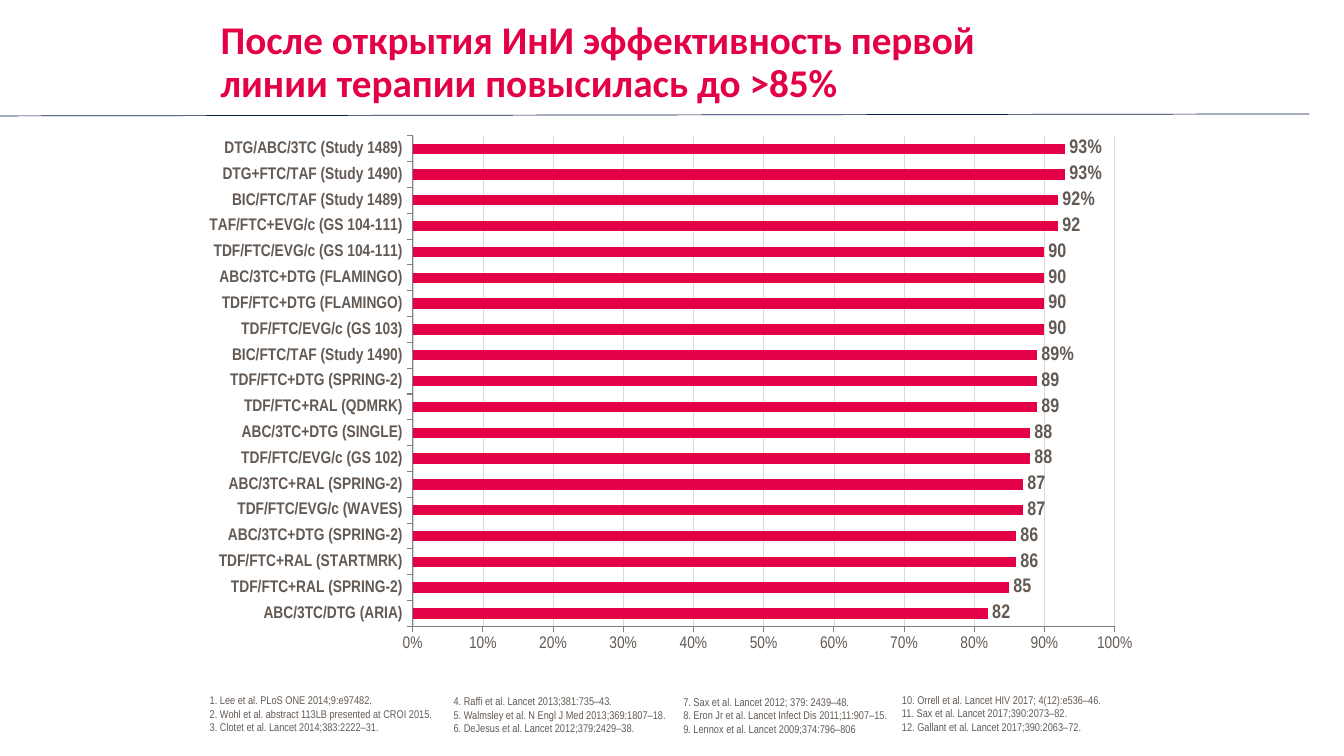
from lxml import etree
from pptx import Presentation
from pptx.chart.data import CategoryChartData
from pptx.dml.color import RGBColor
from pptx.enum.chart import XL_CHART_TYPE, XL_LABEL_POSITION, XL_TICK_MARK
from pptx.enum.shapes import MSO_CONNECTOR
from pptx.enum.text import MSO_ANCHOR
from pptx.oxml import parse_xml
from pptx.oxml.ns import nsdecls, qn
from pptx.util import Pt

BAR_CLUSTERED = XL_CHART_TYPE.BAR_CLUSTERED
OUTSIDE_END = XL_LABEL_POSITION.OUTSIDE_END
TICK_OUTSIDE, TICK_NONE = XL_TICK_MARK.OUTSIDE, XL_TICK_MARK.NONE
STRAIGHT = MSO_CONNECTOR.STRAIGHT
TOP, MIDDLE = MSO_ANCHOR.TOP, MSO_ANCHOR.MIDDLE

RED, BAR_RED, BROWN = "E30046", "E40046", "635A54"
NAVY, AXIS_GREY, GRID_GREY = "071D49", "808080", "D9D9D9"
NARROW = "Arial Narrow"

TITLE = "После открытия ИнИ эффективность первой\nлинии терапии повысилась до >85%"

# Regimen, efficacy in percent, whether its label carries a percent sign
STUDIES = [
    ("ABC/3TC/DTG (ARIA)", 82, False),
    ("TDF/FTC+RAL (SPRING-2)", 85, False),
    ("TDF/FTC+RAL (STARTMRK)", 86, False),
    ("ABC/3TC+DTG (SPRING-2)", 86, False),
    ("TDF/FTC/EVG/c (WAVES)", 87, False),
    ("ABC/3TC+RAL (SPRING-2)", 87, False),
    ("TDF/FTC/EVG/c (GS 102)", 88, False),
    ("ABC/3TC+DTG (SINGLE)", 88, False),
    ("TDF/FTC+RAL (QDMRK)", 89, False),
    ("TDF/FTC+DTG (SPRING-2)", 89, False),
    ("BIC/FTC/TAF (Study 1490)", 89, True),
    ("TDF/FTC/EVG/c (GS 103)", 90, False),
    ("TDF/FTC+DTG (FLAMINGO)", 90, False),
    ("ABC/3TC+DTG (FLAMINGO)", 90, False),
    ("TDF/FTC/EVG/c (GS 104-111)", 90, False),
    ("TAF/FTC+EVG/c (GS 104-111)", 92, False),
    ("BIC/FTC/TAF (Study 1489)", 92, True),
    ("DTG+FTC/TAF (Study 1490)", 93, True),
    ("DTG/ABC/3TC (Study 1489)", 93, True),
]

# Box, insets (left, top, right, bottom), anchor, lines
TOP_INSETS, SIDE_INSETS = (0, 5.8, 0, 0), (7.2, 3.6, 7.2, 3.6)
REFERENCES = [
    ((149.8, 489.6, 200.9, 28.8), TOP_INSETS, TOP, [
        "1. Lee et al. PLoS ONE 2014;9:e97482.",
        "2. Wohl et al. abstract 113LB presented at CROI 2015.",
        "3. Clotet et al. Lancet 2014;383:2222–31."]),
    ((324, 490.3, 173.5, 41.8), TOP_INSETS, TOP, [
        "4. Raffi et al. Lancet 2013;381:735–43.",
        "5. Walmsley et al. N Engl J Med 2013;369:1807–18.",
        "6. DeJesus et al. Lancet 2012;379:2429–38."]),
    ((481, 489.6, 192.2, 42.5), SIDE_INSETS, MIDDLE, [
        "7. Sax et al. Lancet 2012; 379: 2439–48.",
        "8. Eron Jr et al. Lancet Infect Dis 2011;11:907–15.",
        "9. Lennox et al. Lancet 2009;374:796–806"]),
    ((637.2, 493.2, 164.9, 32.4), SIDE_INSETS, MIDDLE, [
        "10. Orrell et al. Lancet HIV 2017; 4(12):e536–46.",
        "11. Sax et al. Lancet 2017;390:2073–82.",
        "12. Gallant et al. Lancet 2017;390:2063–72."]),
]


def color(hex_string):
    return RGBColor.from_string(hex_string)


def format_font(font, size, hex_color=BROWN, name=NARROW, bold=False):
    font.size, font.name, font.bold = Pt(size), name, bold
    font.color.rgb = color(hex_color)


def format_line(line, hex_color, width):
    line.color.rgb = color(hex_color)
    line.width = Pt(width)


def add_text(slide, box, paragraphs, insets=SIDE_INSETS, anchor=TOP, spacing=None, **font):
    """Place a wrapped text box with one format for all its paragraphs."""
    frame = slide.shapes.add_textbox(*map(Pt, box)).text_frame
    frame.word_wrap = True
    frame.vertical_anchor = anchor
    frame.margin_left, frame.margin_top, frame.margin_right, frame.margin_bottom = map(Pt, insets)
    for index, text in enumerate(paragraphs):
        paragraph = frame.add_paragraph() if index else frame.paragraphs[0]
        paragraph.text = text
        paragraph.line_spacing = spacing
        for run in paragraph.runs:
            format_font(run.font, **font)


def add_header(slide, box):
    """Title over a thin, slightly rising rule that starts at the slide edge."""
    left, top, width, height = box
    rule = slide.shapes.add_connector(STRAIGHT, 0, Pt(top + 71.3), Pt(935.3), Pt(top + 69.9))
    format_line(rule.line, NAVY, 0.5)
    etree.SubElement(rule._element.spPr, qn("a:effectLst"))
    add_text(slide, box, [TITLE], spacing=0.9, size=28, hex_color=RED, name="Calibri", bold=True)


def set_plot_layout(chart, left, top, width, height):
    """Fix the inner plot area, in fractions of the chart."""
    plot_area = chart._chartSpace.chart.plotArea
    for layout in plot_area.findall(qn("c:layout")):
        plot_area.remove(layout)
    plot_area.insert(0, parse_xml(
        f'<c:layout {nsdecls("c")}><c:manualLayout><c:layoutTarget val="inner"/>'
        '<c:xMode val="edge"/><c:yMode val="edge"/>'
        f'<c:x val="{left}"/><c:y val="{top}"/><c:w val="{width}"/><c:h val="{height}"/>'
        '</c:manualLayout></c:layout>'))


def format_axes(chart):
    for axis in (chart.category_axis, chart.value_axis):
        axis.major_tick_mark, axis.minor_tick_mark = TICK_OUTSIDE, TICK_NONE
        format_line(axis.format.line, AXIS_GREY, 0.75)
    format_font(chart.category_axis.tick_labels.font, 12, bold=True)
    chart.category_axis.has_major_gridlines = False
    values = chart.value_axis
    format_font(values.tick_labels.font, 12)
    values.tick_labels.number_format = "0%"
    values.tick_labels.number_format_is_linked = False
    values.minimum_scale, values.maximum_scale, values.major_unit = 0, 1, 0.1
    values.has_major_gridlines = True
    format_line(values.major_gridlines.format.line, GRID_GREY, 0.25)


def add_efficacy_chart(slide, box):
    data = CategoryChartData(number_format="0%")
    data.categories = [regimen for regimen, _, _ in STUDIES]
    data.add_series("Series 1", [percent / 100 for _, percent, _ in STUDIES])
    chart = slide.shapes.add_chart(BAR_CLUSTERED, *map(Pt, box), data).chart
    chart.has_legend = chart.has_title = False
    format_font(chart.font, 10, name="Manrope")
    set_plot_layout(chart, 0.23, 0.02, 0.73, 0.91)
    format_axes(chart)

    plot = chart.plots[0]
    plot.gap_width, plot.vary_by_categories = 150, False
    series = plot.series[0]
    series.format.fill.solid()
    series.format.fill.fore_color.rgb = color(BAR_RED)
    labels = series.data_labels
    labels.show_value, labels.position = True, OUTSIDE_END
    labels.number_format, labels.number_format_is_linked = "0%", False
    format_font(labels.font, 14, bold=True)
    for index, (_, percent, has_sign) in enumerate(STUDIES):
        if not has_sign:
            label = series.points[index].data_label
            run = label.text_frame.paragraphs[0].add_run()
            run.text = str(percent)
            format_font(run.font, 14, bold=True)
            label.position = OUTSIDE_END


def add_references(slide):
    for box, insets, anchor, lines in REFERENCES:
        add_text(slide, box, lines, insets, anchor, size=8)


def main():
    presentation = Presentation()
    presentation.slide_width, presentation.slide_height = Pt(960), Pt(540)
    slide = presentation.slides.add_slide(presentation.slide_layouts[6])
    add_header(slide, (150.5, 11.5, 651.6, 58.3))
    add_efficacy_chart(slide, (136.8, 89.3, 686.9, 385.2))
    add_references(slide)
    presentation.save("out.pptx")


if __name__ == "__main__":
    main()
